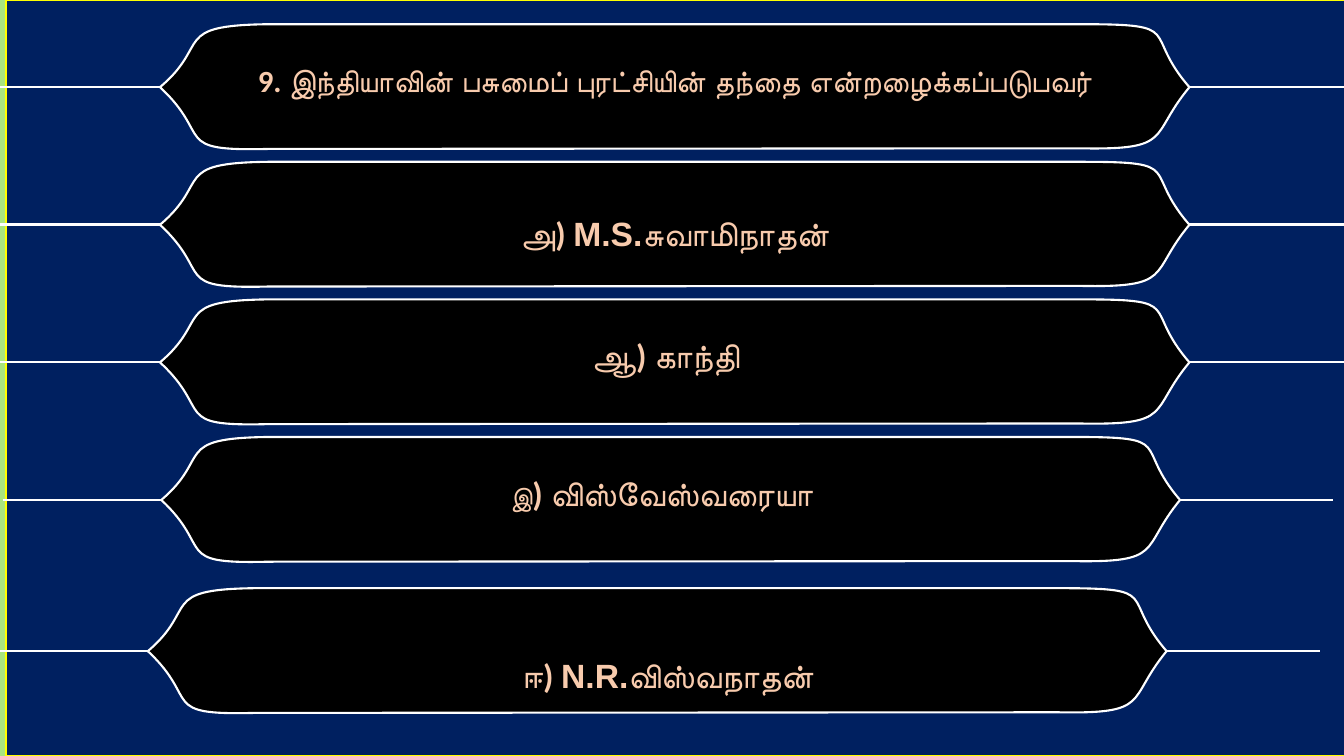
from collections import namedtuple
from lxml.etree import SubElement
from pptx import Presentation
from pptx.dml.color import RGBColor
from pptx.enum.shapes import MSO_CONNECTOR, MSO_SHAPE
from pptx.enum.text import MSO_ANCHOR, PP_ALIGN
from pptx.oxml.ns import qn
from pptx.util import Inches, Pt

WIDTH, HEIGHT = Inches(13.33), Inches(7.5)
COLOURS = {
    "edge": "A9E57F", "backdrop": "002060", "border": "FFFF00",
    "banner": "000000", "outline": "FFFFFF", "text": "F8CBAD",
}
FIRST_ROW, ROW_PITCH, LAST_ROW = 0.032, 0.182, 0.778
BANNER_HEIGHT, RAIL_DROP = 0.165, 0.083
BANNER_START = (0, 0.505)
BANNER_SIDES = [
    [(0.05, 0.16), (0.01, 0.01), (0.105, 0)],
    [(0.895, 0)],
    [(0.998, 0), (0.953, 0.06), (1, 0.505)],
    [(0.96, 0.9), (0.986, 1.01), (0.893, 0.995)],
    [(0.105, 1)],
    [(0.01, 1.02), (0.052, 0.9), BANNER_START],
]
Row = namedtuple("Row", "top left width rail_start rail_end")

QUESTION = [("9. ", "Calibri", 22),
            ("இந்தியாவின் பசுமைப் புரட்சியின் தந்தை என்றழைக்கப்படுபவர்", "Arial", 22)]
ANSWER_A = [("அ) ", "Calibri", 24), ("M.S.சுவாமிநாதன் ", "Arial", 24)]
ANSWER_B = [("ஆ) ", "Calibri", 24), ("காந்தி", "Arial", 24)]
ANSWER_C = [("இ", "Calibri", 18), (") ", "Calibri", 24),
            ("விஸ்வேஸ்வரையா", "Arial", 24)]
ANSWER_D = [("ஈ) ", "Calibri", 24), ("N.R.விஸ்வநாதன்", "Arial", 24)]


def colour(role):
    """Return the colour that belongs to a role on the slide."""
    return RGBColor.from_string(COLOURS[role])


def paint(shape, fill, line, weight):
    """Give a shape its fill and outline, without shadow."""
    shape.shadow.inherit = False
    shape.fill.solid()
    shape.fill.fore_color.rgb = colour(fill)
    shape.line.color.rgb = colour(line)
    shape.line.width = Pt(weight)


def banner_rows():
    """Return the five rows: four evenly spaced and a lower last one."""
    tops = [FIRST_ROW + ROW_PITCH * index for index in range(4)] + [LAST_ROW]
    spans = [(0.119, 0.766, 0, 1)] * 3 + [
        (0.12, 0.758, 0.002, 0.992), (0.11, 0.758, 0, 0.982)]
    return [Row(top, *span) for top, span in zip(tops, spans)]


def add_backdrop(slide):
    """Add the framed dark panel, leaving a thin strip at the left."""
    panel = slide.shapes.add_shape(
        MSO_SHAPE.RECTANGLE, Inches(0.06), 0, WIDTH, HEIGHT)
    paint(panel, "backdrop", "border", 1)


def add_rail(slide, row):
    """Add the horizontal line that runs behind a banner."""
    middle = int(HEIGHT * (row.top + RAIL_DROP))
    rail = slide.shapes.add_connector(
        MSO_CONNECTOR.STRAIGHT, int(WIDTH * row.rail_start), middle,
        int(WIDTH * row.rail_end), middle)
    rail.line.color.rgb = colour("outline")
    rail.line.width = Pt(1.5)
    SubElement(rail._element.spPr, qn("a:effectLst"))


def bend_sides(banner):
    """Turn the slanted sides of a banner into Bézier curves."""
    sides = list(banner._element.iter(qn("a:lnTo")))
    for side, points in zip(sides, BANNER_SIDES):
        if len(points) == 3:
            curve = SubElement(side.getparent(), qn("a:cubicBezTo"))
            for x, y in points:
                SubElement(curve, qn("a:pt"), x=str(int(x * banner.width)),
                           y=str(int(y * banner.height)))
            side.getparent().replace(side, curve)


def add_banner(slide, row):
    """Add a black banner with curved ends."""
    left, top = WIDTH * row.left, HEIGHT * row.top
    width, height = WIDTH * row.width, HEIGHT * BANNER_HEIGHT
    corners = [BANNER_START] + [side[-1] for side in BANNER_SIDES]
    outline = [(int(left + x * width), int(top + y * height)) for x, y in corners]
    builder = slide.shapes.build_freeform(*outline[0])
    builder.add_line_segments(outline[1:], close=True)
    banner = builder.convert_to_shape()
    bend_sides(banner)
    paint(banner, "banner", "outline", 1.5)
    return banner


def write(shape, parts, spacing=1.0):
    """Write centred bold text made of parts with their own font and size."""
    frame = shape.text_frame
    frame.word_wrap = True
    paragraph = frame.paragraphs[0]
    paragraph.alignment = PP_ALIGN.CENTER
    paragraph.line_spacing = spacing
    paragraph.font.bold = True
    paragraph.font.color.rgb = colour("text")
    for text, font, size in parts:
        run = paragraph.add_run()
        run.text = text
        run.font.name = font
        run.font.size = Pt(size)
        run.font.bold = True
        run.font.color.rgb = colour("text")


def write_centred(shape, parts, raise_by, shift_left=0):
    """Write text at the middle of a shape, moved up and left in inches."""
    write(shape, parts)
    frame = shape.text_frame
    frame.vertical_anchor = MSO_ANCHOR.MIDDLE
    frame.margin_top = frame.margin_left = 0
    frame.margin_bottom = Inches(2 * raise_by)
    frame.margin_right = Inches(2 * shift_left)


def add_label(slide, parts, left, top, width):
    """Add an answer in a text box of its own, placed in slide shares."""
    label = slide.shapes.add_textbox(
        int(WIDTH * left), int(HEIGHT * top), int(WIDTH * width),
        int(HEIGHT * 0.088))
    write(label, parts, 1.5)


def place_question(slide, banner):
    """Lay the title placeholder over the first banner."""
    title = slide.shapes.title
    title.left, title.top = banner.left, banner.top
    title.width, title.height = banner.width, banner.height
    slide.shapes._spTree.append(title._element)
    write_centred(title, QUESTION, 0.06)


def main():
    """Build the quiz slide and save it."""
    presentation = Presentation()
    presentation.slide_width, presentation.slide_height = WIDTH, HEIGHT
    slide = presentation.slides.add_slide(presentation.slide_layouts[5])
    slide.background.fill.solid()
    slide.background.fill.fore_color.rgb = colour("edge")
    add_backdrop(slide)
    banners = []
    for row in banner_rows():
        add_rail(slide, row)
        banners.append(add_banner(slide, row))
    place_question(slide, banners[0])
    write_centred(banners[2], ANSWER_B, 0.07, 0.09)
    write_centred(banners[3], ANSWER_C, 0.06, 0.09)
    add_label(slide, ANSWER_D, 0.15, 0.833, 0.694)
    add_label(slide, ANSWER_A, 0.245, 0.248, 0.521)
    presentation.save("out.pptx")


if __name__ == "__main__":
    main()
